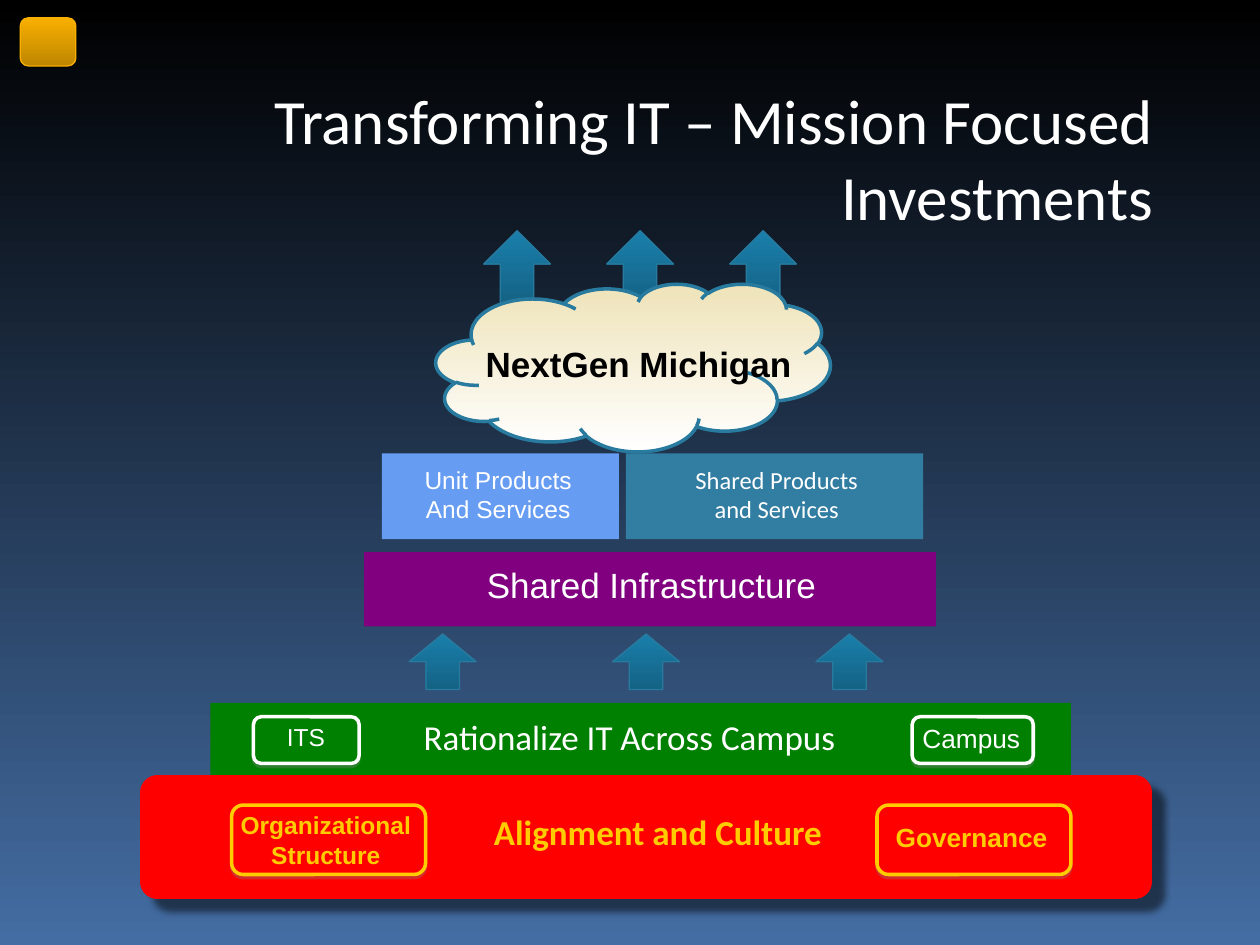
from lxml import etree
from pptx import Presentation
from pptx.dml.color import RGBColor
from pptx.enum.shapes import MSO_SHAPE as Preset
from pptx.enum.text import MSO_ANCHOR as Anchor, MSO_AUTO_SIZE as AutoSize, PP_ALIGN as Align
from pptx.oxml.ns import qn
from pptx.util import Cm, Pt

WHITE = RGBColor(0xFF, 0xFF, 0xFF)
BLACK = RGBColor(0x00, 0x00, 0x00)
GREY = RGBColor(0x80, 0x80, 0x80)
SKY = RGBColor(0x44, 0x6D, 0xA3)
AMBER = RGBColor(0xF8, 0xAF, 0x00)
DARK_AMBER = RGBColor(0xBE, 0x86, 0x00)
AMBER_EDGE = RGBColor(0xF9, 0xB0, 0x00)
PURPLE = RGBColor(0x80, 0x00, 0x80)
LIGHT_BLUE = RGBColor(0x66, 0x9C, 0xF1)
TEAL = RGBColor(0x32, 0x7D, 0xA2)
ARROW_TOP = RGBColor(0x1A, 0x7F, 0xAB)
ARROW_BASE = RGBColor(0x14, 0x62, 0x84)
TEAL_EDGE = RGBColor(0x28, 0x7A, 0x9E)
GREEN = RGBColor(0x00, 0x80, 0x00)
RED = RGBColor(0xFF, 0x00, 0x00)
GOLD = RGBColor(0xFF, 0xCC, 0x00)
CREAM = RGBColor(0xEE, 0xE3, 0xB9)


def cm_box(place):
    return [Cm(length) for length in place]


def write_text(frame, text, size=14, font="Arial", color=WHITE, bold=False, align=Align.CENTER):
    frame.word_wrap = True
    frame.text = text
    for para in frame.paragraphs:
        para.alignment = align
        for span in para.runs:
            span.font.size = Pt(size)
            span.font.name = font
            span.font.color.rgb = color
            span.font.bold = bold


def shade_down(fill, top, bottom):
    fill.gradient()
    fill.gradient_angle = 270
    for stop, color, position in zip(fill.gradient_stops, (top, bottom), (0, 1)):
        stop.color.rgb = color
        stop.position = position


class SlideBuilder:
    def __init__(self, page):
        self.page = page

    def background(self, top, bottom):
        shade_down(self.page.background.fill, top, bottom)

    def title(self, place, text):
        box = self.page.shapes.title
        box.left, box.top, box.width, box.height = cm_box(place)
        frame = box.text_frame
        frame.vertical_anchor = Anchor.TOP
        frame.auto_size = AutoSize.NONE
        write_text(frame, text, size=36, font="Calibri", align=Align.RIGHT)

    def shape(self, preset, place, top, bottom=None, edge=None, weight=0.75):
        shape = self.page.shapes.add_shape(preset, *cm_box(place))
        shape.shadow.inherit = False
        if bottom is None:
            shape.fill.solid()
            shape.fill.fore_color.rgb = top
        else:
            shade_down(shape.fill, top, bottom)
        if edge is None:
            shape.line.fill.background()
        else:
            shape.line.color.rgb = edge
            shape.line.width = Pt(weight)
        return shape

    def shadow(self, shape, color, opacity, blur, distance, angle):
        effects = shape.element.spPr.find(qn("a:effectLst"))
        outer = etree.SubElement(
            effects, qn("a:outerShdw"), blurRad=str(Pt(blur)), dist=str(Pt(distance)),
            dir=str(angle * 60000), algn="ctr", rotWithShape="0")
        tint = etree.SubElement(outer, qn("a:srgbClr"), val=str(color))
        etree.SubElement(tint, qn("a:alpha"), val=str(opacity * 1000))

    def label(self, place, text, **style):
        box = self.page.shapes.add_textbox(*cm_box(place))
        write_text(box.text_frame, text, **style)

    def arrows(self, left, top, step, height):
        for index in range(3):
            self.shape(Preset.UP_ARROW, (left + index * step, top, 1.35, height),
                       ARROW_TOP, ARROW_BASE, edge=TEAL_EDGE)

    def tag(self, place, fill, edge):
        tag = self.shape(Preset.ROUNDED_RECTANGLE, place, fill, edge=edge, weight=2)
        self.shadow(tag, GREY, 35, 0, 1.8, 90)

    def slab(self, place, color, weight):
        slab = self.shape(Preset.RECTANGLE, place, color, edge=color, weight=weight)
        etree.SubElement(slab.element.spPr.find(qn("a:ln")), qn("a:round"))
        self.shadow(slab, BLACK, 50, 4, 9, 45)


def main():
    deck = Presentation()
    deck.slide_width, deck.slide_height = Cm(25.4), Cm(19.05)
    slide = SlideBuilder(deck.slides.add_slide(deck.slide_layouts[5]))

    slide.background(BLACK, SKY)
    slide.shape(Preset.ROUNDED_RECTANGLE, (0.41, 0.36, 1.12, 0.97), AMBER, DARK_AMBER, edge=AMBER_EDGE)
    slide.title((4.75, 1.52, 18.75, 3.33), "Transforming IT – Mission Focused Investments")

    for place, color in (
        ((7.34, 11.13, 11.53, 1.5), PURPLE),
        ((7.7, 9.14, 4.78, 1.73), LIGHT_BLUE),
        ((12.62, 9.14, 5.99, 1.73), TEAL),
        ((4.24, 14.17, 17.35, 1.47), GREEN),
    ):
        slide.shape(Preset.RECTANGLE, place, color)

    slide.arrows(9.75, 4.65, 2.48, 1.5)
    slide.arrows(8.25, 12.78, 4.1, 1.12)
    slide.shape(Preset.CLOUD, (8.79, 5.72, 7.95, 3.38), CREAM, WHITE, edge=TEAL_EDGE, weight=2)
    slide.slab((3.18, 15.98, 19.69, 1.8), RED, 20)

    for place, fill, edge in (
        ((5.11, 14.45, 2.13, 0.94), GREEN, WHITE),
        ((18.39, 14.45, 2.44, 0.94), GREEN, WHITE),
        ((4.67, 16.23, 3.91, 1.4), RED, GOLD),
        ((17.68, 16.23, 3.91, 1.4), RED, GOLD),
    ):
        slide.tag(place, fill, edge)

    slide.label((9.14, 6.78, 7.47, 1.12), "NextGen Michigan", size=20, color=BLACK, bold=True)
    slide.label((7.82, 9.25, 4.45, 1.45), "Unit Products\nAnd Services")
    slide.label((12.7, 9.25, 5.92, 1.45), "Shared Products\nand Services", font="Calibri")
    slide.label((7.42, 11.23, 11.43, 1.12), "Shared Infrastructure", size=20)
    slide.label((7.19, 14.3, 11, 1.12), "Rationalize IT Across Campus", size=20, font="Calibri")
    slide.label((4.8, 14.43, 2.74, 0.86), "ITS")
    slide.label((18.31, 14.43, 2.54, 0.89), "Campus", size=15)
    slide.label((9.19, 16.21, 8.15, 1.12), "Alignment and Culture",
                size=20, font="Calibri", color=GOLD, bold=True)
    slide.label((4.45, 16.21, 4.24, 1.45), "Organizational\nStructure", color=GOLD, bold=True)
    slide.label((17.58, 16.43, 4.01, 0.89), "Governance", size=15, color=GOLD, bold=True)

    deck.save("out.pptx")


if __name__ == "__main__":
    main()
